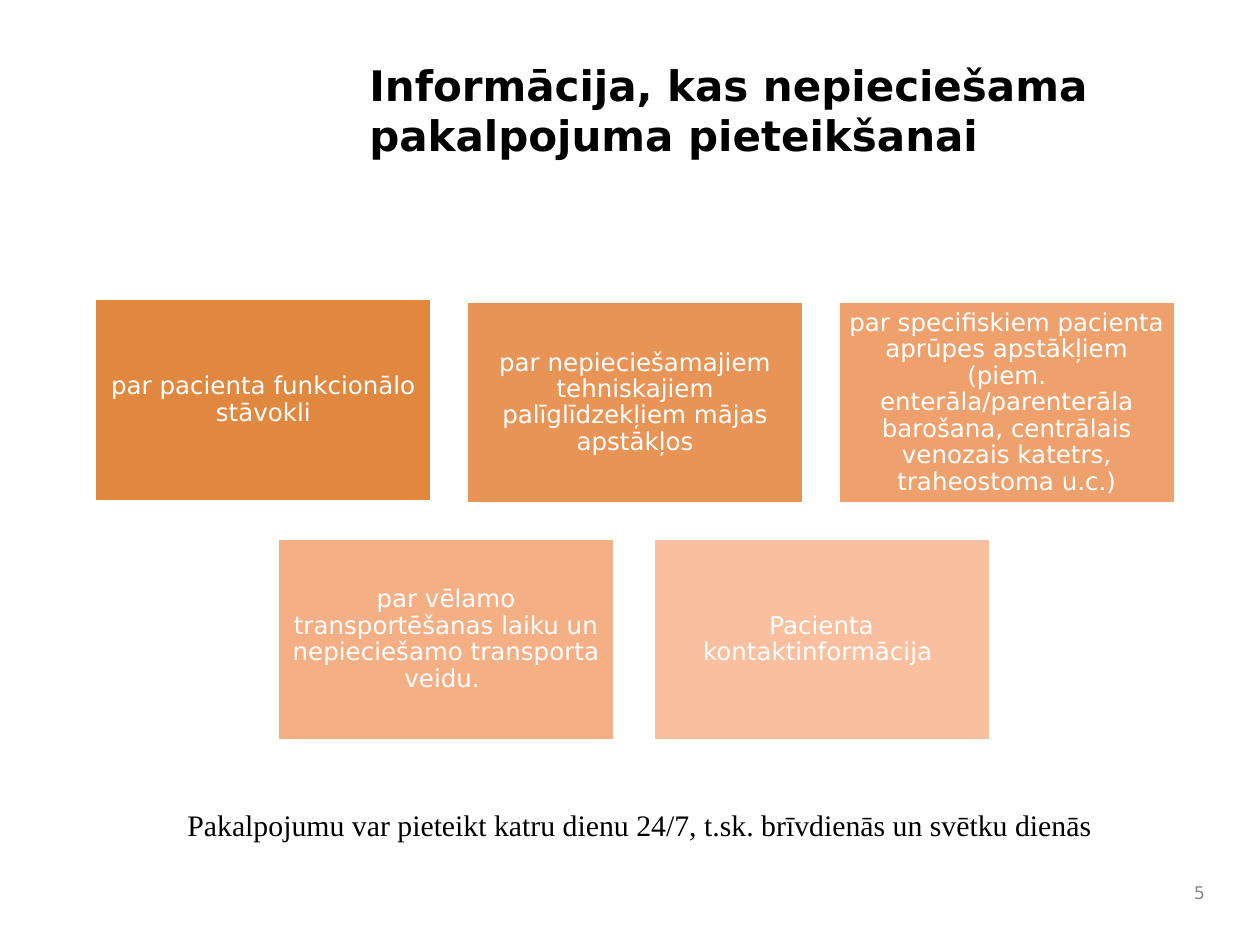
from pptx import Presentation
from pptx.dml.color import RGBColor
from pptx.enum.shapes import MSO_SHAPE
from pptx.enum.text import MSO_ANCHOR, MSO_AUTO_SIZE, PP_ALIGN
from pptx.util import Pt

RECTANGLE = MSO_SHAPE.RECTANGLE
TOP, MIDDLE = MSO_ANCHOR.TOP, MSO_ANCHOR.MIDDLE
LEFT, CENTER, RIGHT = PP_ALIGN.LEFT, PP_ALIGN.CENTER, PP_ALIGN.RIGHT
NO_AUTOFIT = MSO_AUTO_SIZE.NONE
TITLE_ONLY = 5

BLACK = RGBColor(0x00, 0x00, 0x00)
WHITE = RGBColor(0xFF, 0xFF, 0xFF)
GREY = RGBColor(0x89, 0x89, 0x89)
ORANGES = [
    RGBColor(0xE0, 0x88, 0x40),
    RGBColor(0xE8, 0x94, 0x56),
    RGBColor(0xEF, 0xA1, 0x6D),
    RGBColor(0xF5, 0xAF, 0x85),
    RGBColor(0xFA, 0xBF, 0x9F),
]

SANS = "DejaVu Sans"
SERIF = "Times New Roman"

CARD_WIDTH, CARD_HEIGHT = 193, 116
CARDS = [
    (54, 170.6, "par pacienta funkcionālo stāvokli"),
    (266.4, 172.2, "par nepieciešamajiem tehniskajiem palīglīdzekļiem mājas apstākļos"),
    (478.8, 172.2, "par specifiskiem pacienta aprūpes apstākļiem (piem. "
                   "enterāla/parenterāla barošana, centrālais venozais katetrs, "
                   "traheostoma u.c.)"),
    (158.4, 307.4, "par vēlamo transportēšanas laiku un nepieciešamo transporta veidu. "),
    (373, 307.4, "Pacienta kontaktinformācija "),
]


def write_text(frame, text, *, size, color, font=SANS, bold=False, align=LEFT,
               anchor=TOP, margins=(7.2, 3.6), line_spacing=1.0):
    """Fill a text frame; margins are (sides, top and bottom) in points."""
    frame.word_wrap = True
    frame.auto_size = NO_AUTOFIT
    frame.vertical_anchor = anchor
    frame.margin_left = frame.margin_right = Pt(margins[0])
    frame.margin_top = frame.margin_bottom = Pt(margins[1])
    paragraph = frame.paragraphs[0]
    paragraph.alignment = align
    paragraph.line_spacing = line_spacing
    run = paragraph.add_run()
    run.text = text
    run.font.name = font
    run.font.size = Pt(size)
    run.font.bold = bold
    run.font.color.rgb = color


def add_title(slide, text):
    title = slide.shapes.title
    title.left, title.top = Pt(203.8), Pt(30.2)
    title.width, title.height = Pt(480.2), Pt(81.4)
    write_text(title.text_frame, text, size=24, color=BLACK, bold=True)


def add_card(slide, left, top, text, fill):
    card = slide.shapes.add_shape(
        RECTANGLE, Pt(left), Pt(top), Pt(CARD_WIDTH), Pt(CARD_HEIGHT))
    card.shadow.inherit = False
    card.fill.solid()
    card.fill.fore_color.rgb = fill
    card.line.color.rgb = WHITE
    card.line.width = Pt(2)
    write_text(card.text_frame, text, size=14, color=WHITE, align=CENTER,
               anchor=MIDDLE, margins=(4.2, 4.2), line_spacing=0.9)


def add_label(slide, left, top, width, height, text, **text_format):
    label = slide.shapes.add_textbox(Pt(left), Pt(top), Pt(width), Pt(height))
    write_text(label.text_frame, text, **text_format)


def main():
    presentation = Presentation()
    presentation.slide_width, presentation.slide_height = Pt(720), Pt(540)
    slide = presentation.slides.add_slide(presentation.slide_layouts[TITLE_ONLY])

    add_title(slide, "Informācija, kas nepieciešama pakalpojuma pieteikšanai")
    for (left, top, text), fill in zip(CARDS, ORANGES):
        add_card(slide, left, top, text, fill)
    add_label(slide, 100, 457.2, 584, 28,
              "Pakalpojumu var pieteikt katru dienu 24/7, t.sk. brīvdienās un svētku dienās",
              size=17, color=BLACK, font=SERIF)
    add_label(slide, 671.8, 498.2, 23.8, 23.8, "5",
              size=10, color=GREY, align=RIGHT, anchor=MIDDLE)

    presentation.save("out.pptx")


if __name__ == "__main__":
    main()
